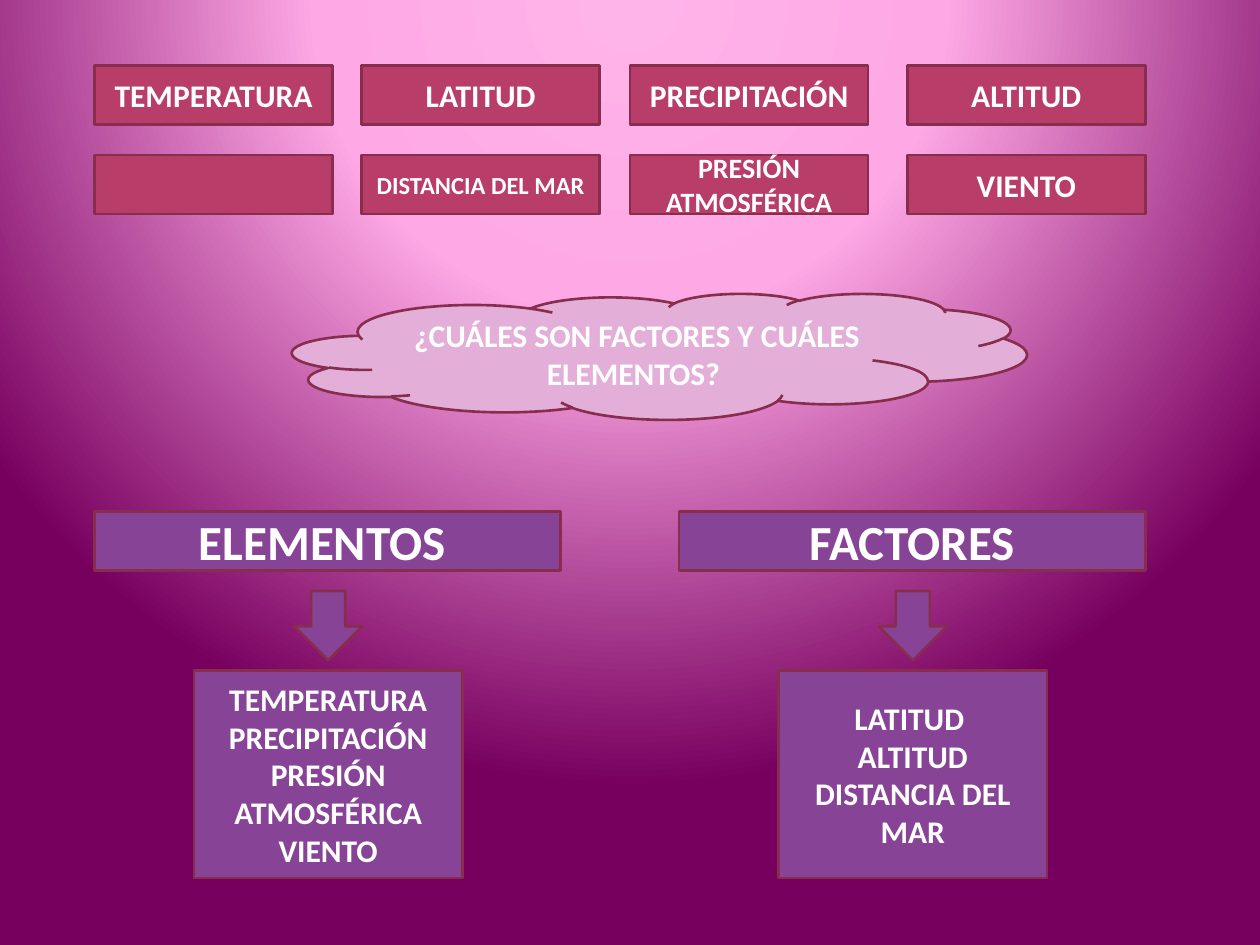
from lxml import etree
from pptx import Presentation
from pptx import util as u
from pptx.dml.color import RGBColor
from pptx.enum import shapes, text
from pptx.oxml import parse_xml
from pptx.oxml.ns import nsdecls, qn

ROSE, PURPLE, PINK = "B83D68", "874396", "E3AFD8"
BORDER, WHITE = "882D4D", "FFFFFF"
RECT = shapes.MSO_SHAPE.RECTANGLE
CLOUD = shapes.MSO_SHAPE.CLOUD
ARROW = shapes.MSO_SHAPE.DOWN_ARROW

TERM_LEFTS = (0.75, 2.87, 5, 7.2)
TERM_ROWS = (
    (0.52, (("TEMPERATURA", 18), ("LATITUD", 18),
            ("PRECIPITACIÓN", 18), ("ALTITUD", 18))),
    (1.23, (("", 18), ("DISTANCIA DEL MAR", 14),
            ("PRESIÓN ATMOSFÉRICA", 16), ("VIENTO", 18))),
)
HEADINGS = ((0.75, "ELEMENTOS "), (5.39, "FACTORES"))
ANSWERS = (
    (1.54, "TEMPERATURA\nPRECIPITACIÓN PRESIÓN ATMOSFÉRICA\nVIENTO"),
    (6.18, "LATITUD \nALTITUD\nDISTANCIA DEL MAR"),
)


def color(value):
    return RGBColor.from_string(value)


def paint_background(page, stops, focus):
    """Fill the page with a circular gradient around the focus rectangle."""
    page.background.fill.solid()
    solid = page.element.find(".//" + qn("p:bgPr")).find(qn("a:solidFill"))
    gradient = parse_xml(
        f'<a:gradFill {nsdecls("a")} rotWithShape="1"><a:gsLst/>'
        '<a:path path="circle"><a:fillToRect/></a:path></a:gradFill>')
    for position, value in stops:
        stop = etree.SubElement(gradient[0], qn("a:gs"), pos=str(position * 1000))
        etree.SubElement(stop, qn("a:srgbClr"), val=value)
    for side, percent in zip("ltrb", focus):
        gradient[1][0].set(side, str(percent * 1000))
    solid.getparent().replace(solid, gradient)


def add_box(parent, kind, place, fill, words="", size=18):
    """Add a bordered shape with centred bold text, one paragraph a line."""
    box = parent.shapes.add_shape(kind, *(u.Inches(length) for length in place))
    box.shadow.inherit = False
    box.fill.solid()
    box.fill.fore_color.rgb = color(fill)
    box.line.color.rgb = color(BORDER)
    box.line.width = u.Pt(1.5)
    frame = box.text_frame
    frame.word_wrap = True
    frame.vertical_anchor = text.MSO_ANCHOR.MIDDLE
    frame.text = words
    for para in frame.paragraphs:
        para.alignment = text.PP_ALIGN.CENTER
        for span in para.runs:
            span.font.name = "Calibri"
            span.font.size = u.Pt(size)
            span.font.bold = True
            span.font.color.rgb = color(WHITE)


def add_headings(page):
    group = page.shapes.add_group_shape()
    for left, words in HEADINGS:
        add_box(group, RECT, (left, 4.06, 3.7, 0.47), PURPLE, words, 28)


def add_terms(page):
    group = page.shapes.add_group_shape()
    for top, terms in TERM_ROWS:
        for left, (words, size) in zip(TERM_LEFTS, terms):
            add_box(group, RECT, (left, top, 1.89, 0.47), ROSE, words, size)


def add_answer(page, left, words):
    """Add an answer box with the arrow centred above it."""
    width, arrow_width = 2.13, 0.54
    group = page.shapes.add_group_shape()
    add_box(group, RECT, (left, 5.32, width, 1.65), PURPLE, words)
    arrow_left = left + (width - arrow_width) / 2
    add_box(group, ARROW, (arrow_left, 4.69, arrow_width, 0.55), PURPLE)


def main():
    deck = Presentation()
    deck.slide_width, deck.slide_height = u.Inches(10), u.Inches(7.5)
    page = deck.slides.add_slide(deck.slide_layouts[6])
    paint_background(page, ((0, "FFB4E9"), (40, "FEA8E5"), (100, "77005F")),
                     (50, -80, 50, 180))

    # Category headings, question and the terms to sort
    add_headings(page)
    add_box(page, CLOUD, (2.32, 2.33, 5.83, 1), PINK,
            " ¿CUÁLES SON FACTORES Y CUÁLES ELEMENTOS?")
    add_terms(page)

    # Sorted answers below each heading
    for left, words in ANSWERS:
        add_answer(page, left, words)

    deck.save("out.pptx")


if __name__ == "__main__":
    main()
